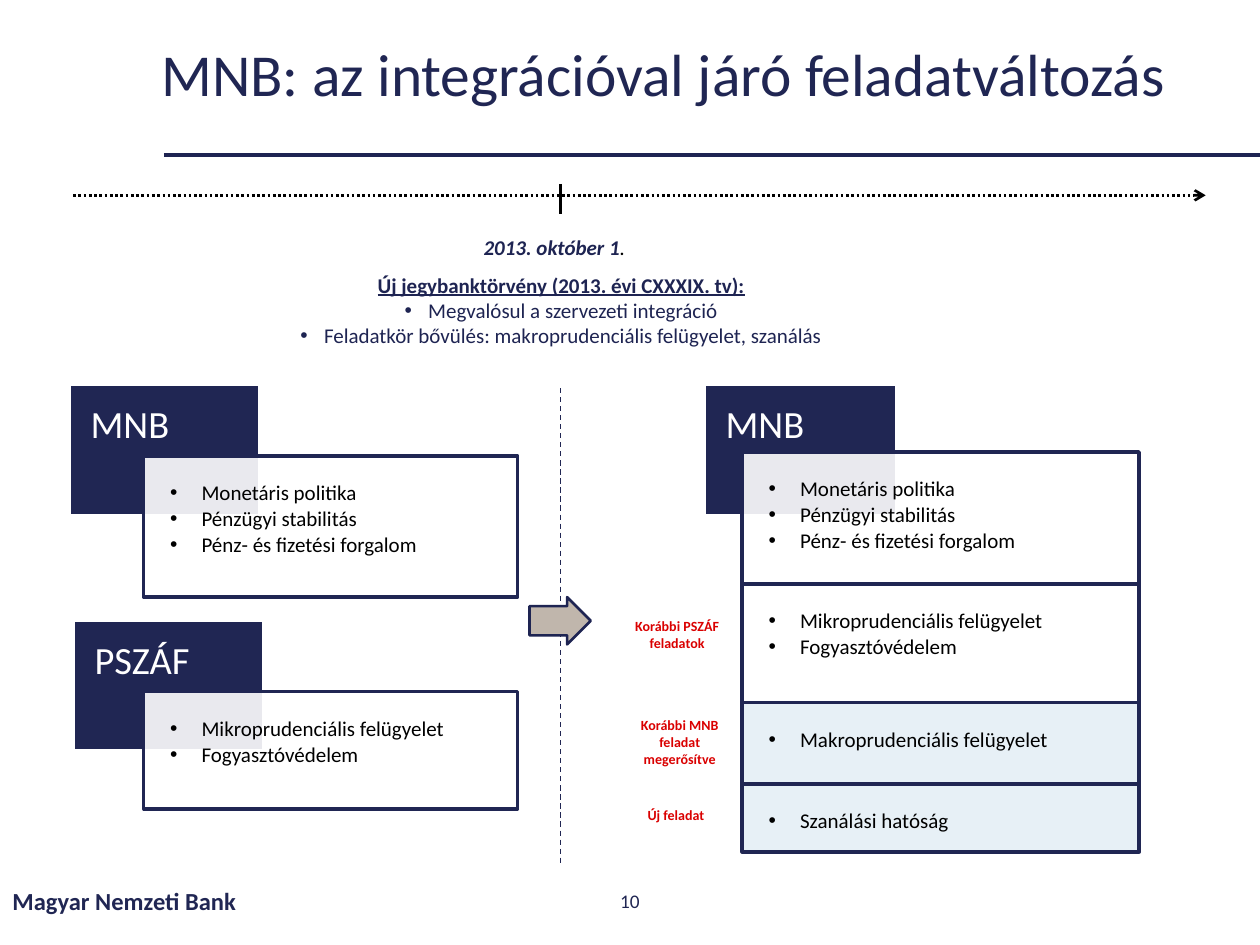
from dataclasses import dataclass

from lxml import etree
from pptx import Presentation
from pptx.dml.color import RGBColor
from pptx.enum.dml import MSO_LINE
from pptx.enum.shapes import MSO_CONNECTOR, MSO_SHAPE
from pptx.enum.text import MSO_ANCHOR, MSO_AUTO_SIZE, PP_ALIGN
from pptx.oxml.ns import qn
from pptx.util import Pt

LEFT, CENTER = PP_ALIGN.LEFT, PP_ALIGN.CENTER
TOP, MIDDLE = MSO_ANCHOR.TOP, MSO_ANCHOR.MIDDLE
FIT_SHAPE, NO_FIT = MSO_AUTO_SIZE.SHAPE_TO_FIT_TEXT, MSO_AUTO_SIZE.NONE
DOTTED, DASHED = MSO_LINE.ROUND_DOT, MSO_LINE.DASH
STRAIGHT = MSO_CONNECTOR.STRAIGHT
RECTANGLE, RIGHT_ARROW = MSO_SHAPE.RECTANGLE, MSO_SHAPE.RIGHT_ARROW


@dataclass(frozen=True)
class Theme:
    font: str = "Calibri"
    navy: str = "202653"
    deep_navy: str = "1E2452"
    white: str = "FFFFFF"
    black: str = "000000"
    pale_blue: str = "E5EFF6"
    sand: str = "C0B6AC"
    red: str = "DA0000"
    title: float = 34
    heading: float = 22
    footer: float = 14
    body: float = 12
    page: float = 11
    label: float = 8


THEME = Theme()
CORE_TASKS = ["Monetáris politika", "Pénzügyi stabilitás", "Pénz- és fizetési forgalom"]
SUPERVISION_TASKS = ["Mikroprudenciális felügyelet", "Fogyasztóvédelem"]


def color(value):
    return RGBColor.from_string(value)


def add_run(paragraph, text, size, fill, bold=False, italic=False, underline=False):
    run = paragraph.add_run()
    run.text = text
    font = run.font
    font.name, font.size = THEME.font, Pt(size)
    font.bold, font.italic, font.underline = bold, italic, underline
    font.color.rgb = color(fill)


def add_bullet(paragraph, indent):
    properties = paragraph._p.get_or_add_pPr()
    properties.set("marL", str(Pt(indent)))
    properties.set("indent", str(Pt(-indent)))
    etree.SubElement(properties, qn("a:buFont"), typeface="Arial")
    etree.SubElement(properties, qn("a:buChar"), char="•")


def next_paragraph(frame, index):
    return frame.add_paragraph() if index else frame.paragraphs[0]


def add_text_box(slide, left, top, width, height, align=LEFT, anchor=TOP, fit=FIT_SHAPE):
    shape = slide.shapes.add_textbox(Pt(left), Pt(top), Pt(width), Pt(height))
    frame = shape.text_frame
    frame.word_wrap, frame.auto_size = True, fit
    frame.vertical_anchor = anchor
    frame.paragraphs[0].alignment = align
    return frame


def add_line(slide, start, end, stroke, width, dash=None, arrow=False):
    connector = slide.shapes.add_connector(STRAIGHT, *(Pt(value) for value in start + end))
    connector.line.color.rgb = color(stroke)
    connector.line.width = Pt(width)
    if dash is not None:
        connector.line.dash_style = dash
    if arrow:
        etree.SubElement(connector.line._get_or_add_ln(), qn("a:tailEnd"), type="arrow")
    etree.SubElement(connector._element.spPr, qn("a:effectLst"))


def add_panel(slide, kind, left, top, width, height, fill, stroke, line_width, opacity=100):
    shape = slide.shapes.add_shape(kind, Pt(left), Pt(top), Pt(width), Pt(height))
    shape.shadow.inherit = False
    shape.fill.solid()
    shape.fill.fore_color.rgb = color(fill)
    shape.line.color.rgb = color(stroke)
    shape.line.width = Pt(line_width)
    if opacity < 100:
        solid = shape._element.spPr.find(qn("a:solidFill"))
        etree.SubElement(solid[0], qn("a:alpha"), val=str(opacity * 1000))
    return shape


def set_insets(frame, side, bottom):
    frame.margin_left = frame.margin_top = frame.margin_right = Pt(side)
    frame.margin_bottom = Pt(bottom)
    frame.vertical_anchor, frame.word_wrap = TOP, True


def build_title(slide, left, top, width, height):
    title = slide.shapes.title
    title.left, title.top, title.width, title.height = (
        Pt(value) for value in (left, top, width, height))
    frame = title.text_frame
    frame.vertical_anchor, frame.auto_size = MIDDLE, NO_FIT
    paragraph = frame.paragraphs[0]
    paragraph.alignment, paragraph.line_spacing = LEFT, 0.9
    add_run(paragraph, "MNB: az integrációval járó feladatváltozás", THEME.title, THEME.navy)
    add_line(slide, (left + 8.6, top + 74.2), (720, top + 74.2), THEME.deep_navy, 2.25)


def build_footer(slide, left, top, width, height):
    owner = add_text_box(slide, left, top, 243.4, height, anchor=MIDDLE, fit=NO_FIT)
    add_run(owner.paragraphs[0], "Magyar Nemzeti Bank", THEME.footer, THEME.navy, bold=True)
    page_width = 162
    page = add_text_box(slide, left + (width - page_width) / 2, top, page_width, height,
                        CENTER, MIDDLE, NO_FIT)
    add_run(page.paragraphs[0], "10", THEME.page, THEME.navy)


def build_timeline(slide, left, top, width):
    tick = left + 278.6
    add_line(slide, (left, top), (left + width, top), THEME.black, 1.5, DOTTED, True)
    add_line(slide, (tick, top - 6.5), (tick, top + 10.8), THEME.black, 1.5)
    date = add_text_box(slide, tick - 51.1, top + 18.7, 96.5, 21.6).paragraphs[0]
    add_run(date, "2013. október 1", THEME.body, THEME.deep_navy, bold=True, italic=True)
    add_run(date, ".", THEME.body, THEME.black, italic=True)

    frame = add_text_box(slide, tick - 164.2, top + 40.3, 329, 51.1, CENTER)
    add_run(frame.paragraphs[0], "Új jegybanktörvény (2013. évi CXXXIX. tv):",
            THEME.body, THEME.deep_navy, bold=True, underline=True)
    for text in ("Megvalósul a szervezeti integráció",
                 "Feladatkör bővülés: makroprudenciális felügyelet, szanálás"):
        paragraph = frame.add_paragraph()
        paragraph.alignment = CENTER
        add_bullet(paragraph, 13.5)
        add_run(paragraph, text, THEME.body, THEME.deep_navy)


def build_institution(slide, left, top, name, header_width, list_box, rows):
    header = add_panel(slide, RECTANGLE, left, top, header_width, 74.9,
                       THEME.navy, THEME.white, 2)
    set_insets(header.text_frame, 12.2, 38.2)
    paragraph = header.text_frame.paragraphs[0]
    paragraph.alignment, paragraph.line_spacing = LEFT, 0.9
    add_run(paragraph, name, THEME.heading, THEME.white)

    list_left, row_top, list_width = left + list_box[0], top + list_box[1], list_box[2]
    for height, fill, tasks in rows:
        row = add_panel(slide, RECTANGLE, list_left, row_top, list_width, height,
                        fill, THEME.navy, 2, 90)
        set_insets(row.text_frame, 15.1, 15.1)
        for index, task in enumerate(tasks):
            paragraph = next_paragraph(row.text_frame, index)
            paragraph.alignment = LEFT
            add_bullet(paragraph, 18)
            paragraph.line_spacing, paragraph.space_after = 0.9, Pt(1.8)
            add_run(paragraph, task, THEME.body, THEME.black)
        row_top += height


def build_transition(slide, left, top, height):
    add_line(slide, (left, top), (left, top + height), THEME.navy, 0.75, DASHED)
    arrow = add_panel(slide, RIGHT_ARROW, left - 17.8, top + 119.4, 35, 27,
                      THEME.sand, THEME.deep_navy, 1.5)
    arrow.adjustments[0], arrow.adjustments[1] = 0.62, 0.5


def build_origin_labels(slide, left, top):
    labels = [("Korábbi PSZÁF feladatok", 0.7, 0, 26.6),
              ("Korábbi MNB feladat megerősítve", 2.2, 56.9, 36),
              ("Új feladat", 0, 108, 17.3)]
    for text, shift, offset, height in labels:
        frame = add_text_box(slide, left + shift, top + offset, 65.5, height, CENTER)
        add_run(frame.paragraphs[0], text, THEME.label, THEME.red, bold=True)


def main():
    presentation = Presentation()
    presentation.slide_width, presentation.slide_height = Pt(720), Pt(540)
    slide = presentation.slides.add_slide(presentation.slide_layouts[5])
    build_title(slide, 85, 14.4, 589.7, 59.8)
    build_footer(slide, 0, 500.4, 720, 28.8)
    build_institution(slide, 402.5, 219.6, "MNB", 110.2, (21.6, 38.7, 226.8), [
        (75.4, THEME.white, CORE_TASKS),
        (67.7, THEME.white, SUPERVISION_TASKS),
        (46.6, THEME.pale_blue, ["Makroprudenciális felügyelet"]),
        (38.9, THEME.pale_blue, ["Szanálási hatóság"])])
    build_institution(slide, 39.6, 219.6, "MNB", 108.7, (42.5, 41, 213.8),
                      [(80.6, THEME.white, CORE_TASKS)])
    build_institution(slide, 41.8, 354.2, "PSZÁF", 108.7, (40.3, 41, 213.8),
                      [(67, THEME.white, SUPERVISION_TASKS)])
    build_timeline(slide, 41.8, 111.6, 647.2)
    build_transition(slide, 320.4, 221.8, 271.4)
    build_origin_labels(slide, 353.5, 349.2)
    presentation.save("out.pptx")


if __name__ == "__main__":
    main()
